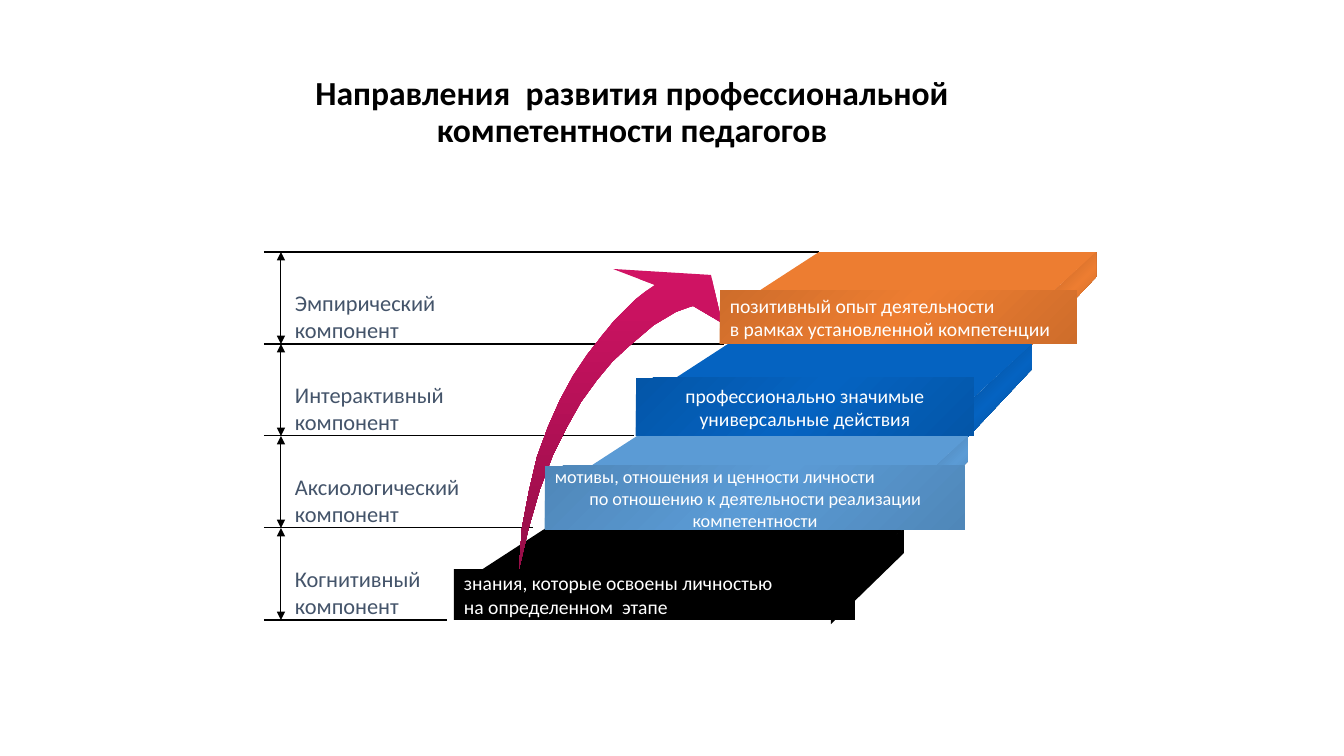
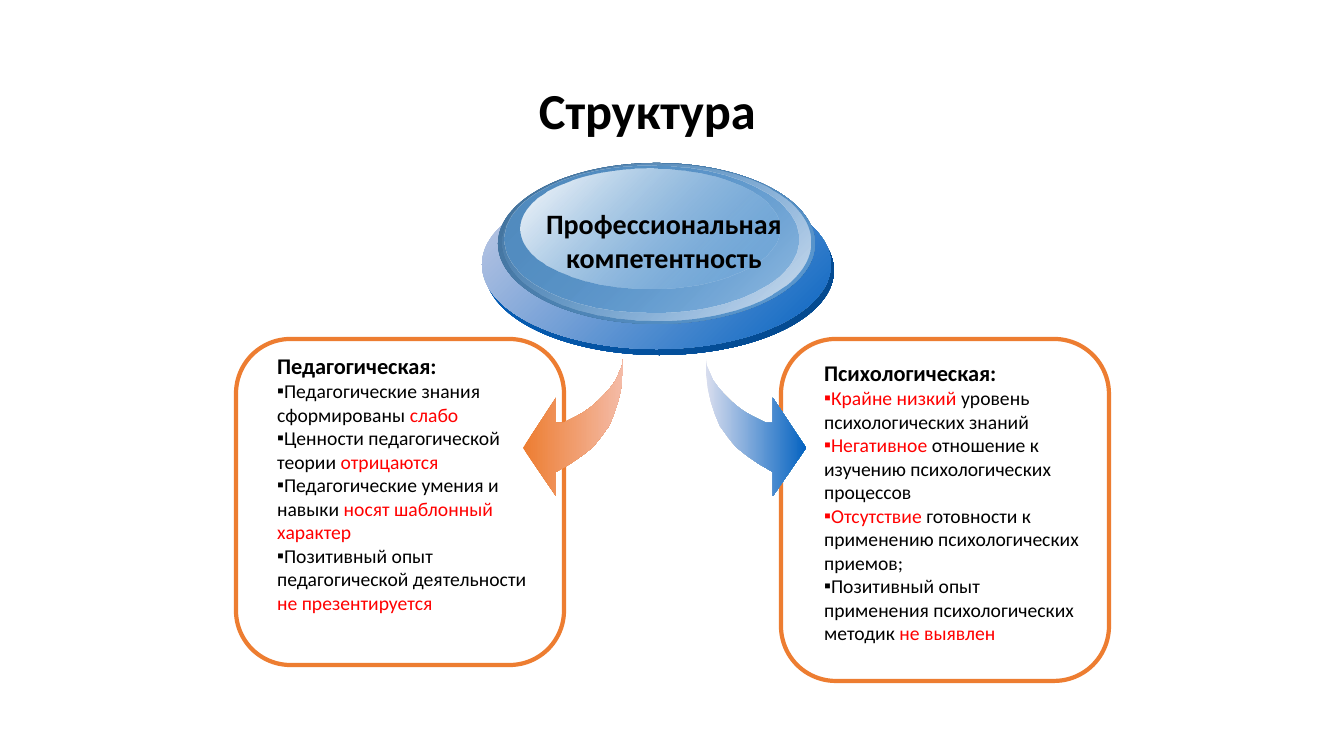
import pptx
import pptx.util
import pptx.dml.color
import pptx.enum.shapes
import pptx.enum.text
import pptx.oxml.ns
import lxml.etree

PX = 914400 / 100.8
FONT = "Calibri"
STEP = 92
C = {
    "black": "000000", "white": "FFFFFF", "red": "FF0000", "slate": "44546A",
    "orange": "ED7D31", "orange_mid": "CE6D2B", "orange_dark": "AA5923", "peach": "F4BBA7",
    "blue": "0563C1", "blue_mid": "0456A8", "blue_dark": "04478A", "blue_pale": "D8DDEE",
    "sky": "5B9BD5", "sky_soft": "528CC0", "sky_mid": "4F87B9", "sky_dark": "416F98",
    "sky_pale": "D8E3F1", "lilac": "C6CDE6", "pink": "D11364", "pink_dark": "960E48",
}
QN = pptx.oxml.ns.qn
SHAPE = pptx.enum.shapes.MSO_SHAPE
ALIGN = pptx.enum.text.PP_ALIGN
ANCHOR = pptx.enum.text.MSO_ANCHOR

LEVELS = [
    dict(label=["Эмпирический", "компонент"], label_w=162, line_end=819,
         color="orange", mid="orange_mid", dark="orange_dark", side=(64, 93),
         bar=(720, 290, 357, 54), size=14, aligns="ll",
         lines=["позитивный опыт деятельности", "в рамках установленной компетенции"]),
    dict(label=["Интерактивный", "компонент"], label_w=171, line_end=724,
         color="blue", mid="blue_mid", dark="blue_dark", side=(64, 93),
         bar=(636, 378, 338, 58), size=14, aligns="cc",
         lines=["профессионально значимые", "универсальные действия"]),
    dict(label=["Аксиологический", "компонент"], label_w=186, line_end=634,
         color="sky", mid="sky_mid", dark="sky_dark", side=(64, 93),
         bar=(545, 466, 420, 64), size=13, aligns="lcc",
         lines=["мотивы, отношения и ценности личности",
                "по отношению к деятельности реализации", "компетентности"]),
    dict(label=["Когнитивный", "компонент"], label_w=153, line_end=533,
         color="black", mid="black", dark="black", side=(73, 96),
         bar=(454, 569, 401, 51), size=14, aligns="ll",
         lines=["знания, которые освоены личностью", "на определенном  этапе"]),
]
RISE_ARROW = [
    (0, 300), (3, 259), (10, 222), (18, 188), (29, 158), (41, 131), (54, 107), (68, 86),
    (82, 68), (95, 52), (107, 40), (117, 30), (126, 23), (136, 16), (94, 0), (192, 6),
    (203, 54), (174, 37), (168, 39), (157, 43), (147, 49), (135, 56), (122, 67), (108, 79),
    (93, 93), (78, 111), (62, 133), (48, 158), (34, 186), (21, 220), (10, 258),
]
BRANCH_ARROW = [
    (0, 0), (0, 15), (2, 30), (5, 43), (9, 55), (14, 67), (22, 78), (30, 88), (40, 96),
    (53, 105), (67, 113), (67, 137), (100, 89), (67, 39), (67, 64), (60, 64), (54, 61),
    (46, 57), (39, 53), (32, 48), (25, 42), (18, 35), (12, 28), (7, 21), (4, 14), (1, 7),
]
DISC = [
    ((3, 23, 349, 169), [("blue", 100), ("blue_dark", 100)]),
    ((0, 17, 349, 169), [("lilac", 100), ("blue", 100)]),
    ((16, 0, 317, 161), [("sky_dark", 100), ("sky", 100)]),
    ((20, 1, 308, 157), [("sky", 0), ("sky_pale", 100)]),
    ((23, 3, 293, 147), [("sky_soft", 100), ("sky", 48)]),
    ((39, 6, 258, 119), [("white", 100), ("sky", 38)]),
]
PEDAGOGY = ("Педагогическая:", [
    ("Педагогические знания сформированы слабо", "слабо"),
    ("Ценности педагогической теории отрицаются", "отрицаются"),
    ("Педагогические умения и навыки носят шаблонный характер", "носят шаблонный характер"),
    ("Позитивный опыт педагогической деятельности не презентируется", "не презентируется"),
])
PSYCHOLOGY = ("Психологическая:", [
    ("Крайне низкий уровень психологических знаний", "Крайне низкий"),
    ("Негативное отношение к изучению психологических процессов", "Негативное"),
    ("Отсутствие готовности к применению психологических приемов;", "Отсутствие"),
    ("Позитивный опыт применения психологических методик не выявлен", "не выявлен"),
])


def emu(px):
    return pptx.util.Emu(round(px * PX))


def place(box):
    return [emu(v) for v in box]


def rgb(name):
    return pptx.dml.color.RGBColor.from_string(C[name])


def move(sp, box):
    sp.left, sp.top, sp.width, sp.height = place(box)


def write(tf, text, size=14, color="black", bold=False, align=ALIGN.LEFT,
          accent="", bullet=None, spacing=1.0):
    p = tf.paragraphs[0]
    if p.runs:
        p = tf.add_paragraph()
    p.alignment = align
    p.line_spacing = spacing
    p.space_before = pptx.util.Pt(0)
    pPr = p._p.get_or_add_pPr()
    pPr.set("marL", "0")
    pPr.set("indent", "0")
    if bullet:
        lxml.etree.SubElement(pPr, QN("a:buChar")).set("char", bullet)
    else:
        lxml.etree.SubElement(pPr, QN("a:buNone"))
    before, marked, after = text.partition(accent) if accent else (text, "", "")
    for part, shade in ((before, color), (marked, "red"), (after, color)):
        if part:
            r = p.add_run()
            r.text = part
            r.font.name = FONT
            r.font.size = pptx.util.Pt(size)
            r.font.bold = bold
            r.font.color.rgb = rgb(shade)


def paint(sp, stops, angle=45):
    sp.shadow.inherit = False
    sp.line.fill.background()
    if len(stops) == 1:
        sp.fill.solid()
        sp.fill.fore_color.rgb = rgb(stops[0][0])
        return
    sp.fill.gradient()
    sp.fill.gradient_angle = -angle % 360
    gs_list = sp._element.spPr.find(QN("a:gradFill")).find(QN("a:gsLst"))
    for gs in list(gs_list):
        gs_list.remove(gs)
    for i, (name, opacity) in enumerate(stops):
        gs = lxml.etree.SubElement(gs_list, QN("a:gs"))
        gs.set("pos", str(100000 * i // (len(stops) - 1)))
        clr = lxml.etree.SubElement(gs, QN("a:srgbClr"))
        clr.set("val", C[name])
        if opacity < 100:
            lxml.etree.SubElement(clr, QN("a:alpha")).set("val", str(opacity * 1000))


def sheen(edge, middle):
    return [(edge, 100), (middle, 100), (edge, 100)] if edge != middle else [(edge, 100)]


def outline(s, points, stops, angle=45):
    fb = s.shapes.build_freeform(*points[0], scale=PX)
    fb.add_line_segments(points[1:], close=True)
    paint(fb.convert_to_shape(), stops, angle)


def line(s, x1, y1, x2, y2, arrows=False):
    cn = s.shapes.add_connector(pptx.enum.shapes.MSO_CONNECTOR.STRAIGHT,
                                *place((x1, y1, x2, y2)))
    cn.line.color.rgb = rgb("black")
    cn.line.width = pptx.util.Pt(0.75)
    if arrows:
        ln = cn.line._get_or_add_ln()
        for end in ("a:headEnd", "a:tailEnd"):
            lxml.etree.SubElement(ln, QN(end)).set("type", "triangle")
    lxml.etree.SubElement(cn._element.spPr, QN("a:effectLst"))


def label(s, box, lines, **fmt):
    tf = s.shapes.add_textbox(*place(box)).text_frame
    tf.word_wrap = False
    for text in lines:
        write(tf, text, **fmt)


def titled_slide(prs, layout, title, box, size):
    s = prs.slides.add_slide(prs.slide_layouts[layout])
    sp = s.shapes.title
    move(sp, box)
    tf = sp.text_frame
    tf.auto_size = pptx.enum.text.MSO_AUTO_SIZE.NONE
    tf.vertical_anchor = ANCHOR.MIDDLE
    write(tf, title, size=size, bold=True, align=ALIGN.CENTER, spacing=0.9)
    return s


def scale_of_levels(s, x, y):
    ends = [level["line_end"] for level in LEVELS] + [447]
    for i, end in enumerate(ends):
        line(s, x, y + i * STEP, end, y + i * STEP)
    for i, level in enumerate(LEVELS):
        top = y + i * STEP
        line(s, x + 17, top, x + 17, top + STEP, arrows=True)
        label(s, (x + 21, top + 32, level["label_w"], 65), level["label"],
              size=16, color="slate")


def step_body(s, level, left, right, y):
    depth, drop = level["side"]
    outline(s, [(right, y), (right, y + 25), (right - depth, y + drop), (right - depth, y + 60)],
            sheen(level["dark"], level["color"]))
    outline(s, [(left, y), (right, y), (right - 64, y + 59), (left - 91, y + 59)],
            [(level["color"], 100)])


def step_bar(s, level):
    sp = s.shapes.add_shape(SHAPE.RECTANGLE, *place(level["bar"]))
    paint(sp, sheen(level["mid"], level["color"]))
    tf = sp.text_frame
    tf.word_wrap = True
    tf.vertical_anchor = ANCHOR.MIDDLE
    for text, side in zip(level["lines"], level["aligns"]):
        write(tf, text, size=level["size"], color="white",
              align=ALIGN.CENTER if side == "c" else ALIGN.LEFT)


def staircase(s, left, right, y):
    for i, level in enumerate(LEVELS):
        step_body(s, level, left - 91 * i, right - 64 * i, y + STEP * i)
    outline(s, [(left - 300 + dx, y + 17 + dy) for dx, dy in RISE_ARROW],
            [("pink", 100), ("pink_dark", 100)], angle=90)
    for level in LEVELS:
        step_bar(s, level)


def panel(s, body, box, text_box, content):
    x, y, w, h = box
    dx, dy, tw, th = text_box
    sp = s.shapes.add_shape(SHAPE.ROUNDED_RECTANGLE, *place(box))
    sp.adjustments[0] = 0.167
    sp.shadow.inherit = False
    sp.fill.background()
    sp.line.color.rgb = rgb("orange")
    sp.line.width = pptx.util.Pt(3)
    move(body, (x + dx, y + dy, tw, th))
    tf = body.text_frame
    tf.word_wrap = True
    tf.auto_size = pptx.enum.text.MSO_AUTO_SIZE.NONE
    heading, items = content
    write(tf, heading, size=16, bold=True)
    for text, accent in items:
        write(tf, text, accent=accent, bullet="▪")


def branch_arrow(s, x, y, direction, stops):
    outline(s, [(x + direction * dx, y + dy) for dx, dy in BRANCH_ARROW], stops, angle=0)


def disc(s, x, y, lines):
    for (dx, dy, w, h), stops in DISC:
        paint(s.shapes.add_shape(SHAPE.OVAL, *place((x + dx, y + dy, w, h))), stops)
    label(s, (x + 50, y + 39, 264, 78), lines, size=20, bold=True, align=ALIGN.CENTER)


def directions_slide(prs):
    s = titled_slide(prs, 5, "Направления  развития профессиональной компетентности педагогов",
                     (255, 40, 754, 146), 24)
    scale_of_levels(s, 264, 252)
    staircase(s, 819, 1096, 252)


def structure_slide(prs):
    s = titled_slide(prs, 3, "Структура", (307, 40, 681, 146), 36)
    left, right = s.placeholders[1], s.placeholders[2]
    panel(s, right, (781, 339, 328, 342), (33, 15, 285, 323), PSYCHOLOGY)
    panel(s, left, (236, 339, 328, 326), (31, 8, 270, 298), PEDAGOGY)
    branch_arrow(s, 623, 359, -1, [("orange", 100), ("peach", 100)])
    branch_arrow(s, 706, 359, 1, [("blue_pale", 100), ("blue", 100)])
    disc(s, 482, 163, ["Профессиональная", "компетентность"])


def main():
    prs = pptx.Presentation()
    prs.slide_width, prs.slide_height = emu(1344), emu(756)
    directions_slide(prs)
    structure_slide(prs)
    prs.save("out.pptx")


if __name__ == "__main__":
    main()
